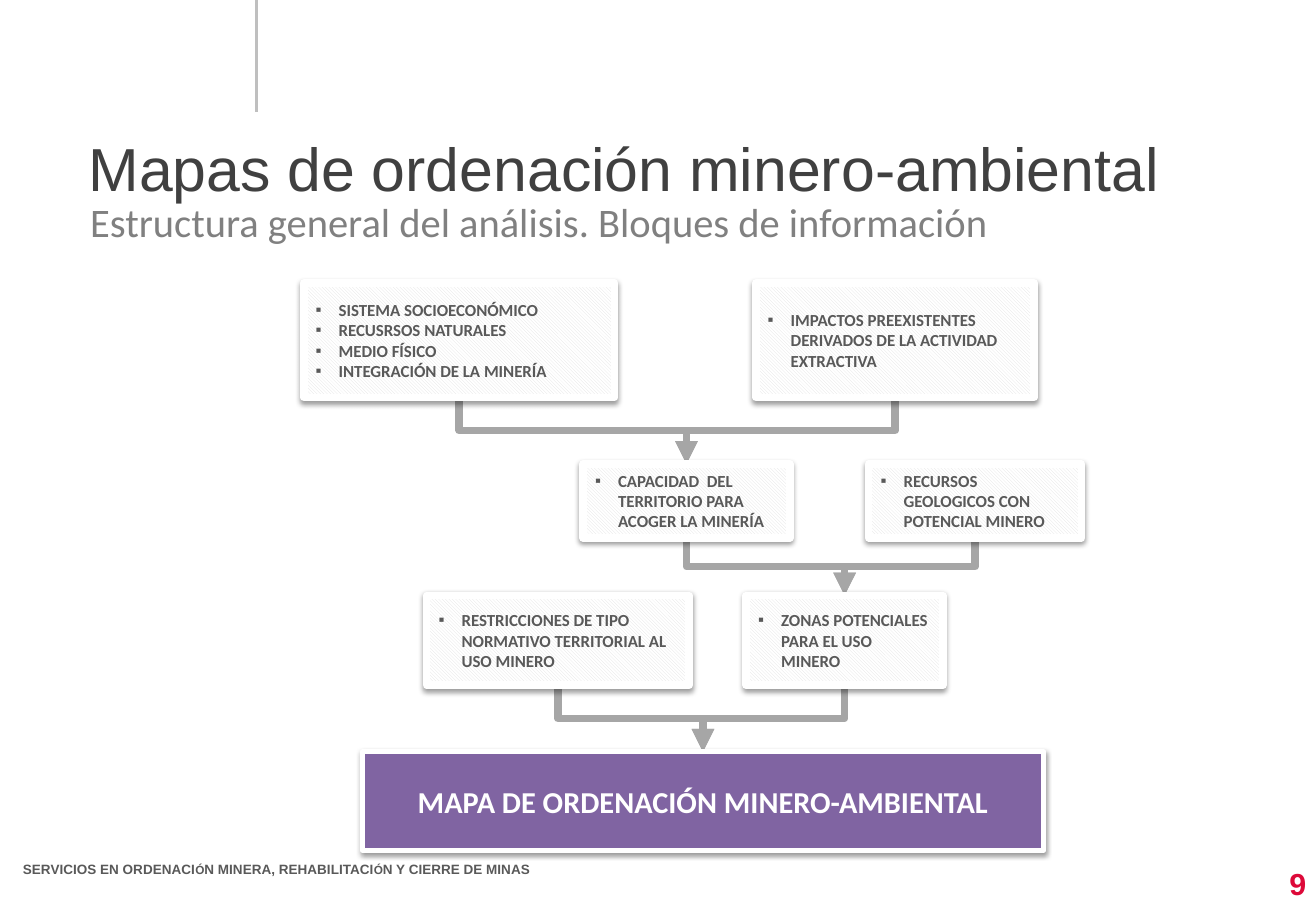
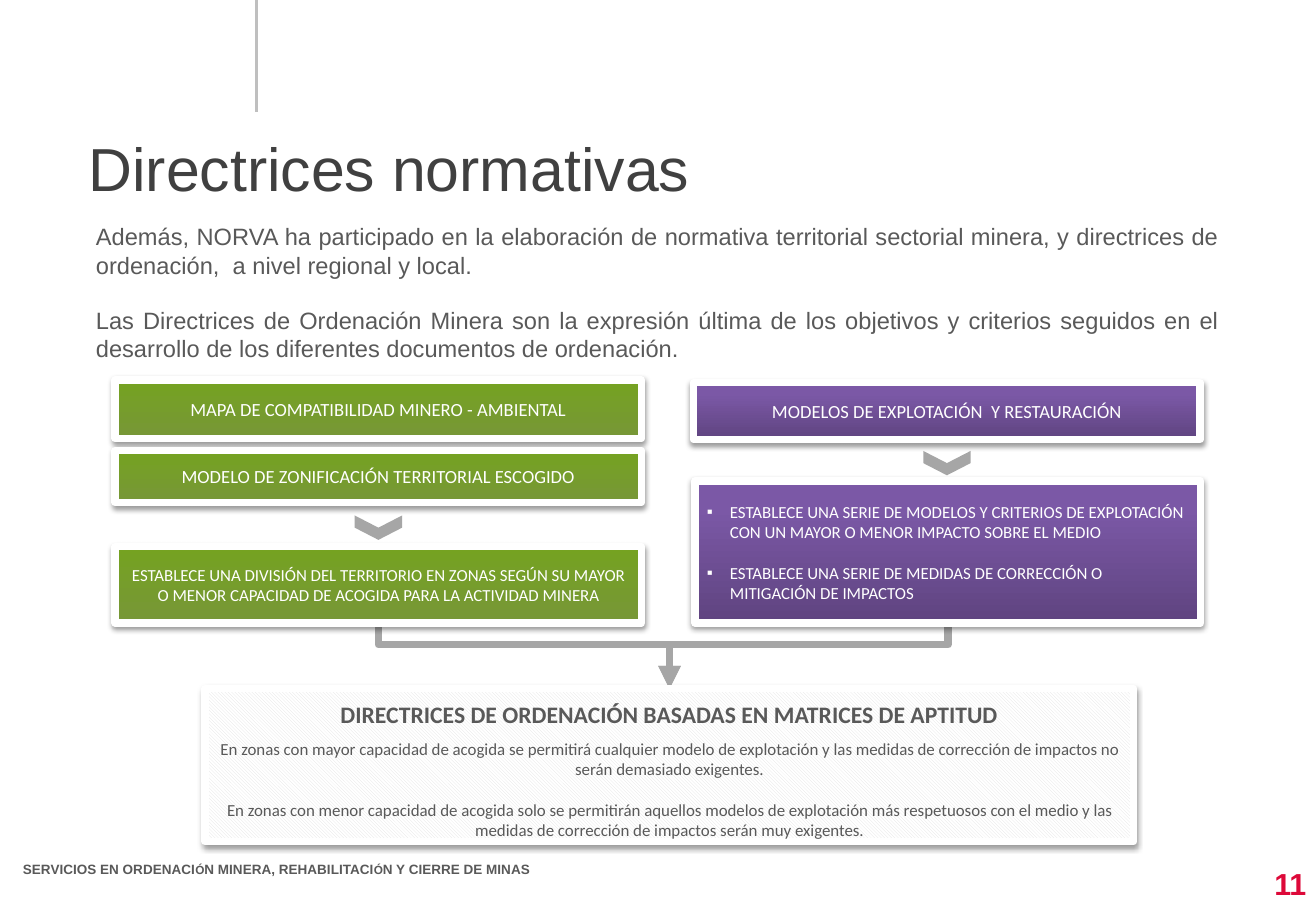
from dataclasses import dataclass
from typing import Any

from lxml.etree import SubElement
from pptx import Presentation
from pptx.dml.color import RGBColor
from pptx.enum.dml import MSO_PATTERN
from pptx.enum.shapes import MSO_CONNECTOR, MSO_SHAPE
from pptx.enum.text import MSO_ANCHOR, MSO_AUTO_SIZE, PP_ALIGN
from pptx.oxml.ns import qn
from pptx.shapes.autoshape import Shape
from pptx.slide import Slide
from pptx.text.text import TextFrame
from pptx.util import Cm, Pt

WHITE = RGBColor(0xFF, 0xFF, 0xFF)
INK = RGBColor(0x40, 0x40, 0x40)
DARK = RGBColor(0x59, 0x59, 0x59)
MID = RGBColor(0x80, 0x80, 0x80)
STEEL = RGBColor(0xA6, 0xA6, 0xA6)
PALE = RGBColor(0xBF, 0xBF, 0xBF)
HATCH = RGBColor(0xE2, 0xE2, 0xE2)
RED = RGBColor(0xDD, 0x09, 0x39)
PLUM = RGBColor(0x80, 0x64, 0xA2)
GREENS = (RGBColor(0x77, 0x97, 0x37), RGBColor(0x75, 0xA2, 0x21), 1.0)
PURPLES = (RGBColor(0x5F, 0x44, 0x80), RGBColor(0x7B, 0x58, 0xA6), 0.8)

LEFT, MIDDLE, RIGHT = PP_ALIGN.LEFT, PP_ALIGN.CENTER, PP_ALIGN.RIGHT
FOOT = (("SERVICIOS EN ORDENACI", 8), ("Ó", 7), ("N MINERA, REHABILITACI", 8),
        ("Ó", 7), ("N Y CIERRE DE MINAS", 8))
FRAME = {"word_wrap": True, "auto_size": MSO_AUTO_SIZE.NONE}
FLUSH = dict.fromkeys(("margin_left", "margin_top", "margin_right", "margin_bottom"), 0)


@dataclass(frozen=True)
class Area:
    """Place and size in centimetres."""
    left: float
    top: float
    width: float
    height: float

    def lengths(self) -> tuple[Cm, Cm, Cm, Cm]:
        """Give the four lengths."""
        return Cm(self.left), Cm(self.top), Cm(self.width), Cm(self.height)


@dataclass(frozen=True)
class Line:
    """One paragraph with its look."""
    text: str
    size: float = 10
    color: RGBColor = DARK
    bold: bool = False
    align: PP_ALIGN = MIDDLE
    bullet: bool = False
    before: float = 0
    font: str = "Calibri"


@dataclass(frozen=True)
class Tier:
    """A row of boxes and the column of the next row that it leads to."""
    top: float
    height: float
    boxes: tuple[tuple[float, float, tuple[str, ...]], ...]
    goal: int


def apply(target: Any, values: dict[str, Any]) -> None:
    """Set each attribute from the values."""
    for name, value in values.items():
        setattr(target, name, value)


def write(frame: TextFrame, lines: list[Line]) -> None:
    """Fill a text frame with paragraphs."""
    apply(frame, FRAME)
    for index, line in enumerate(lines):
        para = frame.add_paragraph() if index else frame.paragraphs[0]
        props = para._p.get_or_add_pPr()
        indent = Cm(0.48) if line.bullet else 0
        props.set("marL", str(indent))
        props.set("indent", str(-indent))
        if line.bullet:
            SubElement(props, qn("a:buFont")).set("typeface", "Arial")
            SubElement(props, qn("a:buChar")).set("char", "▪")
        else:
            SubElement(props, qn("a:buNone"))
        apply(para, {"alignment": line.align, "space_before": Pt(line.before)})
        run = para.add_run()
        run.text = line.text
        apply(run.font, {"name": line.font, "size": Pt(line.size), "bold": line.bold})
        run.font.color.rgb = line.color


def shade(box: Shape) -> None:
    """Give a box its soft shadow."""
    box.shadow.inherit = False
    glow = SubElement(box._element.spPr.find(qn("a:effectLst")), qn("a:outerShdw"))
    for name, value in {"blurRad": 40000, "dist": 21000, "dir": 5400000,
                        "rotWithShape": 0}.items():
        glow.set(name, str(value))
    tint = SubElement(glow, qn("a:srgbClr"))
    tint.set("val", "000000")
    SubElement(tint, qn("a:alpha")).set("val", "38000")


def draw(slide: Slide, area: Area, lines: list[Line],
         fill: RGBColor | tuple[RGBColor, RGBColor, float] | None = None,
         edge: float = 4.5) -> Shape:
    """Draw a framed box, hatched unless a colour or a blend is given."""
    box = slide.shapes.add_shape(MSO_SHAPE.ROUNDED_RECTANGLE, *area.lengths())
    box.adjustments[0] = 0
    if fill is None:
        box.fill.patterned()
        box.fill.pattern = MSO_PATTERN.LIGHT_DOWNWARD_DIAGONAL
        box.fill.fore_color.rgb = HATCH
        box.fill.back_color.rgb = WHITE
    elif isinstance(fill, RGBColor):
        box.fill.solid()
        box.fill.fore_color.rgb = fill
    else:
        box.fill.gradient()
        box.fill.gradient_angle = 90
        for stop, color, place in zip(box.fill.gradient_stops, fill, (0, fill[2])):
            stop.color.rgb = color
            stop.position = place
    box.line.color.rgb = WHITE
    box.line.width = Pt(edge)
    shade(box)
    box.text_frame.vertical_anchor = MSO_ANCHOR.MIDDLE
    write(box.text_frame, lines)
    return box


def link(slide: Slide, start: Shape, goal: Shape, bend: float = 0.5) -> None:
    """Lead an elbow arrow from the foot of one box to the top of another."""
    arrow = slide.shapes.add_connector(MSO_CONNECTOR.ELBOW, 0, 0, 1, 1)
    arrow.begin_connect(start, 2)
    arrow.end_connect(goal, 0)
    from_x, to_x = start.left + start.width // 2, goal.left + goal.width // 2
    from_y, to_y = start.top + start.height, goal.top
    drop, reach = to_y - from_y, abs(to_x - from_x)
    apply(arrow, {"left": (from_x + to_x - drop) // 2, "top": (from_y + to_y - reach) // 2,
                  "width": drop, "height": reach})
    arrow.line.color.rgb = STEEL
    arrow.line.width = Pt(4.5)
    props = arrow._element.spPr
    right = to_x > from_x
    apply(props.find(qn("a:xfrm")), {"rot": 270 if right else 90, "flipH": right, "flipV": False})
    guide = SubElement(props.find(qn("a:prstGeom")).find(qn("a:avLst")), qn("a:gd"))
    guide.set("name", "adj1")
    guide.set("fmla", f"val {round(bend * 100000)}")
    SubElement(props.find(qn("a:ln")), qn("a:tailEnd")).set("type", "triangle")
    SubElement(props, qn("a:effectLst"))
    arrow._element.getparent().insert(2, arrow._element)


def point(slide: Slide, box: Shape, top: float) -> None:
    """Put a downward chevron under the middle of a box."""
    wide, tall = Cm(0.51), Cm(0.99)
    mark = slide.shapes.add_shape(MSO_SHAPE.CHEVRON, box.left + (box.width - wide) // 2,
                                  Cm(top), wide, tall)
    mark.rotation = 90
    mark.shadow.inherit = False
    mark.fill.solid()
    mark.fill.fore_color.rgb = STEEL
    mark.line.fill.background()


def start(deck: Any, title: str, number: str, area: Area, body: list[Line]) -> Slide:
    """Add a slide with title, body, rule, footer and number."""
    slide = deck.slides.add_slide(deck.slide_layouts[1])
    head, text = slide.placeholders
    for holder, place, lines in (
            (head, Area(1.85, 2.51, 24, 1.96), [Line(title, 36, INK, align=LEFT, font="Arial")]),
            (text, area, body)):
        apply(holder, dict(zip(("left", "top", "width", "height"), place.lengths())))
        write(holder.text_frame, lines)
    apply(head.text_frame, FLUSH | {"vertical_anchor": MSO_ANCHOR.MIDDLE})

    rule = slide.shapes.add_connector(MSO_CONNECTOR.STRAIGHT, Cm(5.36), 0, Cm(5.36), Cm(2.34))
    rule.line.color.rgb = PALE
    rule.line.width = Pt(1.5)
    SubElement(rule._element.spPr, qn("a:effectLst"))

    foot = slide.shapes.add_textbox(*Area(0.23, 17.93, 16.13, 0.69).lengths()).text_frame
    apply(foot, FRAME)
    foot.paragraphs[0].line_spacing = 0.9
    for piece, size in FOOT:
        run = foot.paragraphs[0].add_run()
        run.text = piece
        apply(run.font, {"name": "Arial", "size": Pt(size), "bold": True})
        run.font.color.rgb = DARK

    page = slide.shapes.add_textbox(*Area(25.35, 17.98, 2.21, 0.99).lengths()).text_frame
    page.vertical_anchor = MSO_ANCHOR.MIDDLE
    write(page, [Line(number, 18, RED, True, RIGHT, font="Arial")])
    return slide


TIERS = (
    Tier(5.92, 2.39, (
        (6.35, 6.5, ("SISTEMA SOCIOECONÓMICO", "RECUSRSOS NATURALES", "MEDIO FÍSICO",
                     "INTEGRACIÓN DE LA MINERÍA")),
        (15.8, 5.82, ("IMPACTOS PREEXISTENTES DERIVADOS DE LA ACTIVIDAD EXTRACTIVA",))), 0),
    Tier(9.7, 1.55, (
        (12.19, 4.32, ("CAPACIDAD  DEL TERRITORIO PARA ACOGER LA MINERÍA",)),
        (18.16, 4.45, ("RECURSOS GEOLOGICOS CON POTENCIAL MINERO",))), 1),
    Tier(12.45, 1.88, (
        (8.92, 5.49, ("RESTRICCIONES DE TIPO NORMATIVO TERRITORIAL AL USO MINERO",)),
        (15.6, 4.11, ("ZONAS POTENCIALES PARA EL USO MINERO",))), 0),
)


def maps(deck: Any) -> None:
    """Build the slide on the structure of the analysis."""
    slide = start(deck, "Mapas de ordenación minero-ambiental", "9", Area(1.63, 3.99, 24, 1.27),
                  [Line("Estructura general del análisis. Bloques de información", 24, MID,
                        align=LEFT)])
    rows = [[draw(slide, Area(left, tier.top, width, tier.height),
                  [Line(text, bold=True, align=LEFT, bullet=True) for text in texts])
             for left, width, texts in tier.boxes] for tier in TIERS]
    rows.append([draw(slide, Area(7.57, 15.72, 14.25, 2.06),
                      [Line("MAPA DE ORDENACIÓN MINERO-AMBIENTAL", 18, WHITE, True)], PLUM, 3)])
    for tier, row, below in zip(TIERS, rows, rows[1:]):
        for box in row:
            link(slide, box, below[tier.goal])


def rules(deck: Any) -> None:
    """Build the slide on the guidelines."""
    texts = (
        "Además, NORVA ha participado en la elaboración de normativa territorial sectorial "
        "minera, y directrices de ordenación,  a nivel regional y local.",
        "Las Directrices de Ordenación Minera son la expresión última de los objetivos y "
        "criterios seguidos en el desarrollo de los diferentes documentos de ordenación.")
    slide = start(deck, "Directrices normativas", "11", Area(1.75, 4.52, 24, 3.25),
                  [Line(text, 14, align=PP_ALIGN.JUSTIFY, before=16 * index, font="Arial")
                   for index, text in enumerate(texts)])
    greens = [draw(slide, Area(2.41, top, 11, height), [Line(text, size, WHITE)], GREENS)
              for top, height, size, text in (
                  (7.95, 1.22, 11, "MAPA DE COMPATIBILIDAD MINERO - AMBIENTAL"),
                  (9.42, 1.09, 11, "MODELO DE ZONIFICACIÓN TERRITORIAL ESCOGIDO"),
                  (11.43, 1.6, 10, "ESTABLECE UNA DIVISIÓN DEL TERRITORIO EN ZONAS SEGÚN SU MAYOR "
                   "O MENOR CAPACIDAD DE ACOGIDA PARA LA ACTIVIDAD MINERA"))]
    models = draw(slide, Area(14.5, 8, 10.59, 1.19),
                  [Line("MODELOS DE EXPLOTACIÓN  Y RESTAURACIÓN", 11, WHITE)], PURPLES)
    aims = ("ESTABLECE UNA SERIE DE MODELOS Y CRITERIOS DE EXPLOTACIÓN CON UN MAYOR O MENOR "
            "IMPACTO SOBRE EL MEDIO",
            "ESTABLECE UNA SERIE DE MEDIDAS DE CORRECCIÓN O MITIGACIÓN DE IMPACTOS")
    effects = draw(slide, Area(14.53, 10.06, 10.57, 2.97),
                   [Line(text, 10, WHITE, align=LEFT, bullet=True, before=12 * index)
                    for index, text in enumerate(aims)], PURPLES)
    result = draw(slide, Area(4.29, 14.4, 19.41, 3.2), [
        Line("DIRECTRICES DE ORDENACIÓN BASADAS EN MATRICES DE APTITUD", 14, bold=True),
        Line("En zonas con mayor capacidad de acogida se permitirá cualquier modelo de "
             "explotación y las medidas de corrección de impactos no serán demasiado exigentes.",
             before=6),
        Line("En zonas con menor capacidad de acogida solo se permitirán aquellos modelos de "
             "explotación más respetuosos con el medio y las medidas de corrección de impactos "
             "serán muy exigentes.", before=12)])
    apply(result.text_frame, {"margin_top": Cm(0.2), "margin_bottom": 0})
    point(slide, greens[1], 10.54)
    point(slide, models, 9.19)
    for box in (greens[-1], effects):
        link(slide, box, result, 0.33)


def main() -> None:
    """Build and save the deck."""
    deck = Presentation()
    apply(deck, {"slide_width": Cm(27.51), "slide_height": Cm(19.05)})
    maps(deck)
    rules(deck)
    deck.save("out.pptx")


if __name__ == "__main__":
    main()
